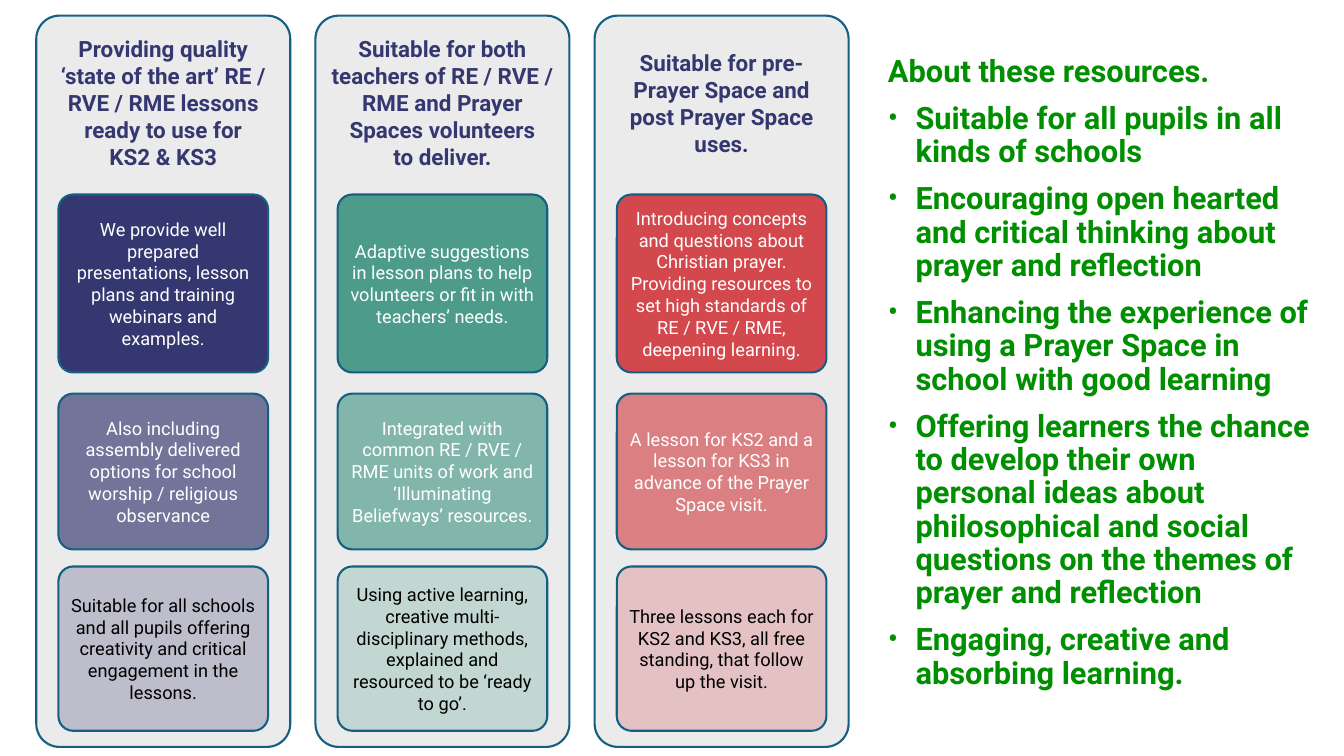
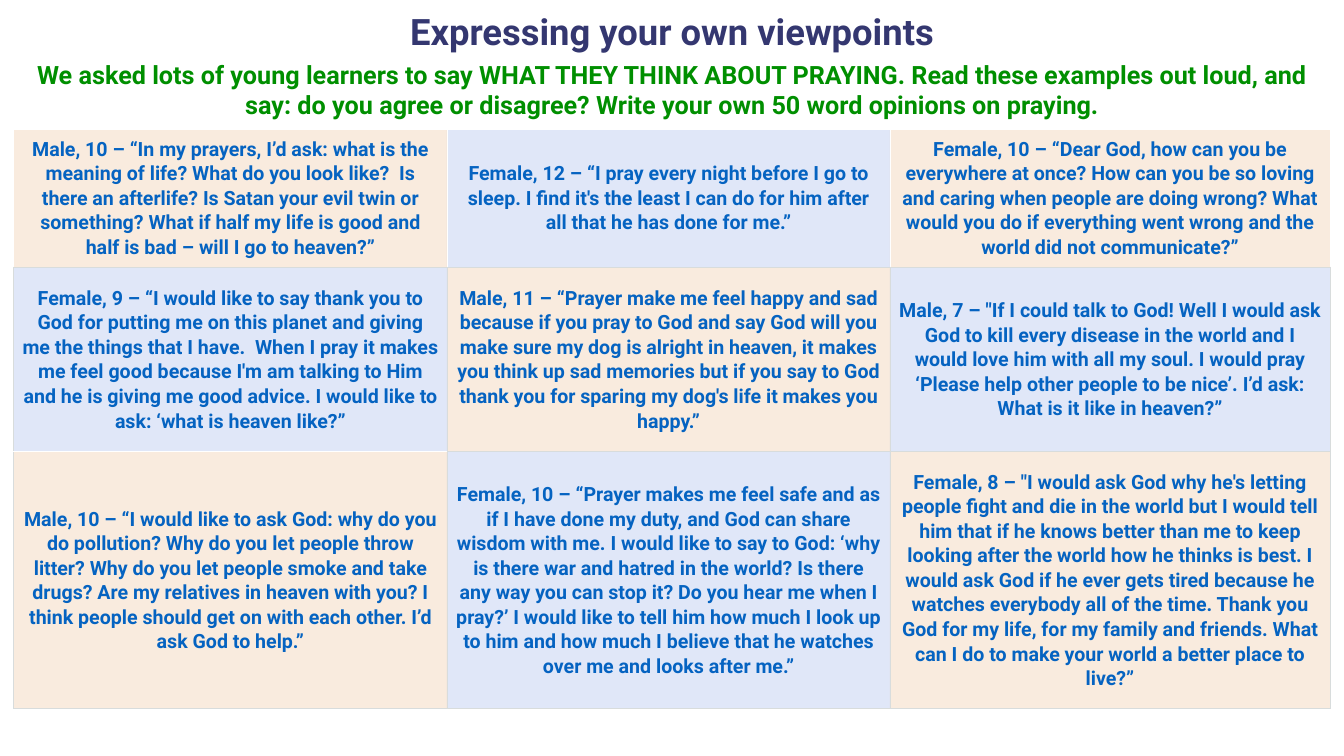
"""Build two slides: an overview of the resources and a grid of pupils' viewpoints."""
from dataclasses import dataclass

from lxml import etree
from pptx import Presentation
from pptx.dml.color import RGBColor
from pptx.enum import shapes, text
from pptx.oxml.ns import qn
from pptx.util import Inches, Pt


@dataclass(frozen=True)
class Theme:
    font: str = "Roboto"
    navy: str = "343770"
    teal: str = "4D9C8B"
    red: str = "D2484D"
    green: str = "008F00"
    quote: str = "0563C1"
    peach: str = "E59B5D"
    sky: str = "668ADC"
    panel: str = "EBEBEB"
    outline: str = "156082"
    grid: str = "D8DCDC"
    white: str = "FFFFFF"
    black: str = "000000"
    title_size: int = 52
    about_size: int = 44
    prompt_size: int = 36
    heading_size: int = 32
    quote_size: int = 28
    card_size: int = 26


THEME = Theme()

PILLARS = [
    {
        "heading": "Providing quality ‘state of the art’ RE / RVE / RME lessons ready to use for\nKS2 & KS3",
        "color": THEME.navy,
        "cards": [
            "We provide well prepared presentations, lesson plans and training webinars and examples.",
            "Also including assembly delivered options for school worship / religious observance",
            "Suitable for all schools and all pupils offering creativity and critical engagement in the lessons.",
        ],
    },
    {
        "heading": "Suitable for both teachers of RE / RVE / RME and Prayer Spaces volunteers\nto deliver.",
        "color": THEME.teal,
        "cards": [
            "Adaptive suggestions in lesson plans to help volunteers or fit in with teachers’ needs.",
            "Integrated with common RE / RVE / RME units of work and ‘Illuminating Beliefways’ resources.",
            "Using active learning, creative multi-disciplinary methods, explained and resourced to be ‘ready to go’.",
        ],
    },
    {
        "heading": "Suitable for pre-Prayer Space and post Prayer Space uses.",
        "color": THEME.red,
        "cards": [
            "Introducing concepts and questions about Christian prayer. Providing resources to set high "
            "standards of RE / RVE / RME, deepening learning.",
            "A lesson for KS2 and a lesson for KS3 in advance of the Prayer Space visit.",
            "Three lessons each for KS2 and KS3, all free standing, that follow up the visit.",
        ],
    },
]

ABOUT_HEADING = "About these resources."
ABOUT_POINTS = [
    "Suitable for all pupils in all kinds of schools",
    "Encouraging open hearted and critical thinking about prayer and reflection",
    "Enhancing the experience of using a Prayer Space in school with good learning",
    "Offering learners the chance to develop their own personal ideas about philosophical and "
    "social questions on the themes of prayer and reflection",
    "Engaging, creative and absorbing learning.",
]

TITLE = "Expressing your own viewpoints"
PROMPT = (
    "We asked lots of young learners to say WHAT THEY THINK ABOUT PRAYING. Read these examples out "
    "loud, and say: do you agree or disagree? Write your own 50 word opinions on praying."
)
VIEWPOINTS = [
    [
        "Male, 10 – “In my prayers, I’d ask: what is the meaning of life? What do you look like?  Is there "
        "an afterlife? Is Satan your evil twin or something? What if half my life is good and half is bad "
        "– will I go to heaven?”",
        "Female, 12 – “I pray every night before I go to sleep. I find it's the least I can do for him "
        "after all that he has done for me.”",
        "Female, 10 – “Dear God, how can you be everywhere at once? How can you be so loving and caring "
        "when people are doing wrong? What would you do if everything went wrong and the world did not "
        "communicate?”",
    ],
    [
        "Female, 9 – “I would like to say thank you to God for putting me on this planet and giving me the "
        "things that I have.  When I pray it makes me feel good because I'm am talking to Him and he is "
        "giving me good advice. I would like to ask: ‘what is heaven like?”",
        "Male, 11 – “Prayer make me feel happy and sad because if you pray to God and say God will you make "
        "sure my dog is alright in heaven, it makes you think up sad memories but if you say to God thank "
        "you for sparing my dog's life it makes you happy.”",
        "Male, 7 – \"If I could talk to God! Well I would ask God to kill every disease in the world and I "
        "would love him with all my soul. I would pray ‘Please help other people to be nice’. I’d ask: "
        "What is it like in heaven?”",
    ],
    [
        "Male, 10 – “I would like to ask God: why do you do pollution? Why do you let people throw litter? "
        "Why do you let people smoke and take drugs? Are my relatives in heaven with you? I think people "
        "should get on with each other. I’d ask God to help.”",
        "Female, 10 – “Prayer makes me feel safe and as if I have done my duty, and God can share wisdom "
        "with me. I would like to say to God: ‘why is there war and hatred in the world? Is there any way "
        "you can stop it? Do you hear me when I pray?’ I would like to tell him how much I look up to him "
        "and how much I believe that he watches over me and looks after me.”",
        "Female, 8 – \"I would ask God why he's letting people fight and die in the world but I would tell "
        "him that if he knows better than me to keep looking after the world how he thinks is best. I would "
        "ask God if he ever gets tired because he watches everybody all of the time. Thank you God for my "
        "life, for my family and friends. What can I do to make your world a better place to live?”",
    ],
]
CELL_BORDERS = [["B", "B", "B"], ["LRT", "LRTB", "LRTB"], ["LRB", "LRTB", "LRTB"]]
COLUMN_WIDTHS = [8.6, 8.79, 8.73]
ROW_HEIGHTS = [2.7, 3.66, 5.1]

PANEL_LEFT, PANEL_TOP, PANEL_WIDTH, PANEL_HEIGHT = 0.72, 0.31, 5.04, 14.51
PANEL_PITCH = 5.54
PANEL_RADIUS, CARD_RADIUS = 0.46, 0.29
HEADING_TOP, HEADING_WIDTH, HEADING_HEIGHT = 0.62, 4.68, 2.84
CARD_WIDTH = 4.16
CARD_ROWS = [
    (3.86, 3.53, 100, THEME.white),
    (7.81, 3.09, 66, THEME.white),
    (11.24, 3.26, 25, THEME.black),
]


def write(frame, content, *, size, color, bold=False, align=text.PP_ALIGN.CENTER,
          line=None, before=0, bullet=None, indent=0):
    """Add one formatted paragraph, reusing the frame's first if it is empty."""
    first = not frame.text
    paragraph = frame.paragraphs[0] if first else frame.add_paragraph()
    paragraph.text = content
    paragraph.alignment = align
    if line:
        paragraph.line_spacing = line
    if before and not first:
        paragraph.space_before = Pt(before)
    if bullet:
        properties = paragraph._p.get_or_add_pPr()
        properties.set("marL", str(Inches(indent)))
        properties.set("indent", str(-Inches(indent)))
        etree.SubElement(properties, qn("a:buFont")).set("typeface", THEME.font)
        etree.SubElement(properties, qn("a:buChar")).set("char", bullet)
    for run in paragraph.runs:
        run.font.name = THEME.font
        run.font.size = Pt(size)
        run.font.bold = bold
        run.font.color.rgb = RGBColor.from_string(color)


def set_margins(target, horizontal, vertical):
    """Set equal side margins and equal top and bottom margins."""
    target.margin_left = target.margin_right = Inches(horizontal)
    target.margin_top = target.margin_bottom = Inches(vertical)


def paint(fill, owner, color, opacity=100):
    """Fill with a colour whose alpha is stored in the owner's properties."""
    fill.solid()
    fill.fore_color.rgb = RGBColor.from_string(color)
    if opacity < 100:
        shade = owner.find(qn("a:solidFill"))[0]
        etree.SubElement(shade, qn("a:alpha")).set("val", str(opacity * 1000))


def add_frame(slide, left, top, width, height, margin, anchor=text.MSO_ANCHOR.TOP):
    """Add a wrapping text box and return its text frame."""
    frame = slide.shapes.add_textbox(*map(Inches, (left, top, width, height))).text_frame
    frame.word_wrap = True
    frame.vertical_anchor = anchor
    set_margins(frame, margin, margin)
    return frame


def add_rounded(slide, left, top, width, height, radius, color, opacity=100):
    """Add an outlined rounded rectangle with a fixed corner radius."""
    box = slide.shapes.add_shape(
        shapes.MSO_SHAPE.ROUNDED_RECTANGLE, *map(Inches, (left, top, width, height)))
    box.adjustments[0] = radius / min(width, height)
    box.shadow.inherit = False
    paint(box.fill, box._element.spPr, color, opacity)
    box.line.color.rgb = RGBColor.from_string(THEME.outline)
    box.line.width = Pt(3)
    return box


def add_borders(cell, sides):
    """Draw thin grid lines on the given sides of a cell."""
    properties = cell._tc.get_or_add_tcPr()
    for position, side in enumerate(sides):
        edge = etree.Element(qn(f"a:ln{side}"), w=str(Pt(1)))
        solid = etree.SubElement(edge, qn("a:solidFill"))
        etree.SubElement(solid, qn("a:srgbClr")).set("val", THEME.grid)
        properties.insert(position, edge)


def build_resources(slide):
    """Lay out the three pillars and the list beside them."""
    about = add_frame(slide, 17.52, 1, 8.62, 13.12, 0.1)
    style = dict(size=THEME.about_size, color=THEME.green, bold=True,
                 align=text.PP_ALIGN.LEFT, line=0.9, before=20)
    write(about, ABOUT_HEADING, **style)
    for point in ABOUT_POINTS:
        write(about, point, bullet="•", indent=0.55, **style)

    for index, pillar in enumerate(PILLARS):
        left = PANEL_LEFT + index * PANEL_PITCH
        center = left + PANEL_WIDTH / 2
        add_rounded(slide, left, PANEL_TOP, PANEL_WIDTH, PANEL_HEIGHT, PANEL_RADIUS, THEME.panel)
        heading = add_frame(slide, center - HEADING_WIDTH / 2, HEADING_TOP, HEADING_WIDTH,
                            HEADING_HEIGHT, 0.1, text.MSO_ANCHOR.MIDDLE)
        write(heading, pillar["heading"], size=THEME.heading_size, color=THEME.navy, bold=True)
        for message, (top, height, opacity, ink) in zip(pillar["cards"], CARD_ROWS):
            card = add_rounded(slide, center - CARD_WIDTH / 2, top, CARD_WIDTH, height,
                               CARD_RADIUS, pillar["color"], opacity)
            card.text_frame.word_wrap = True
            card.text_frame.vertical_anchor = text.MSO_ANCHOR.MIDDLE
            set_margins(card.text_frame, 0.12, 0.1)
            write(card.text_frame, message, size=THEME.card_size, color=ink)


def build_viewpoints(slide):
    """Lay out the title, the prompt and the table of quotes."""
    title = add_frame(slide, 0.7, 0.18, 25.27, 2.37, 0)
    write(title, TITLE, size=THEME.title_size, color=THEME.navy, bold=True)
    write(title, PROMPT, size=THEME.prompt_size, color=THEME.green, bold=True, before=9)

    quotes = slide.shapes.add_table(
        len(ROW_HEIGHTS), len(COLUMN_WIDTHS), Inches(0.27), Inches(2.56),
        Inches(sum(COLUMN_WIDTHS)), Inches(sum(ROW_HEIGHTS))).table
    quotes.first_row = quotes.horz_banding = False
    for column, width in zip(quotes.columns, COLUMN_WIDTHS):
        column.width = Inches(width)
    for r, (row, height) in enumerate(zip(quotes.rows, ROW_HEIGHTS)):
        row.height = Inches(height)
        for c, cell in enumerate(row.cells):
            cell.vertical_anchor = text.MSO_ANCHOR.MIDDLE
            set_margins(cell, 0.17, 0.12)
            tint = THEME.sky if (r + c) % 2 else THEME.peach
            paint(cell.fill, cell._tc.get_or_add_tcPr(), tint, 20)
            add_borders(cell, CELL_BORDERS[r][c])
            write(cell.text_frame, VIEWPOINTS[r][c], size=THEME.quote_size,
                  color=THEME.quote, bold=True, line=1.07)


def main():
    """Create both slides and save the deck."""
    deck = Presentation()
    deck.slide_width, deck.slide_height = Inches(26.67), Inches(15)
    for build in (build_resources, build_viewpoints):
        build(deck.slides.add_slide(deck.slide_layouts[6]))
    deck.save("out.pptx")


if __name__ == "__main__":
    main()
